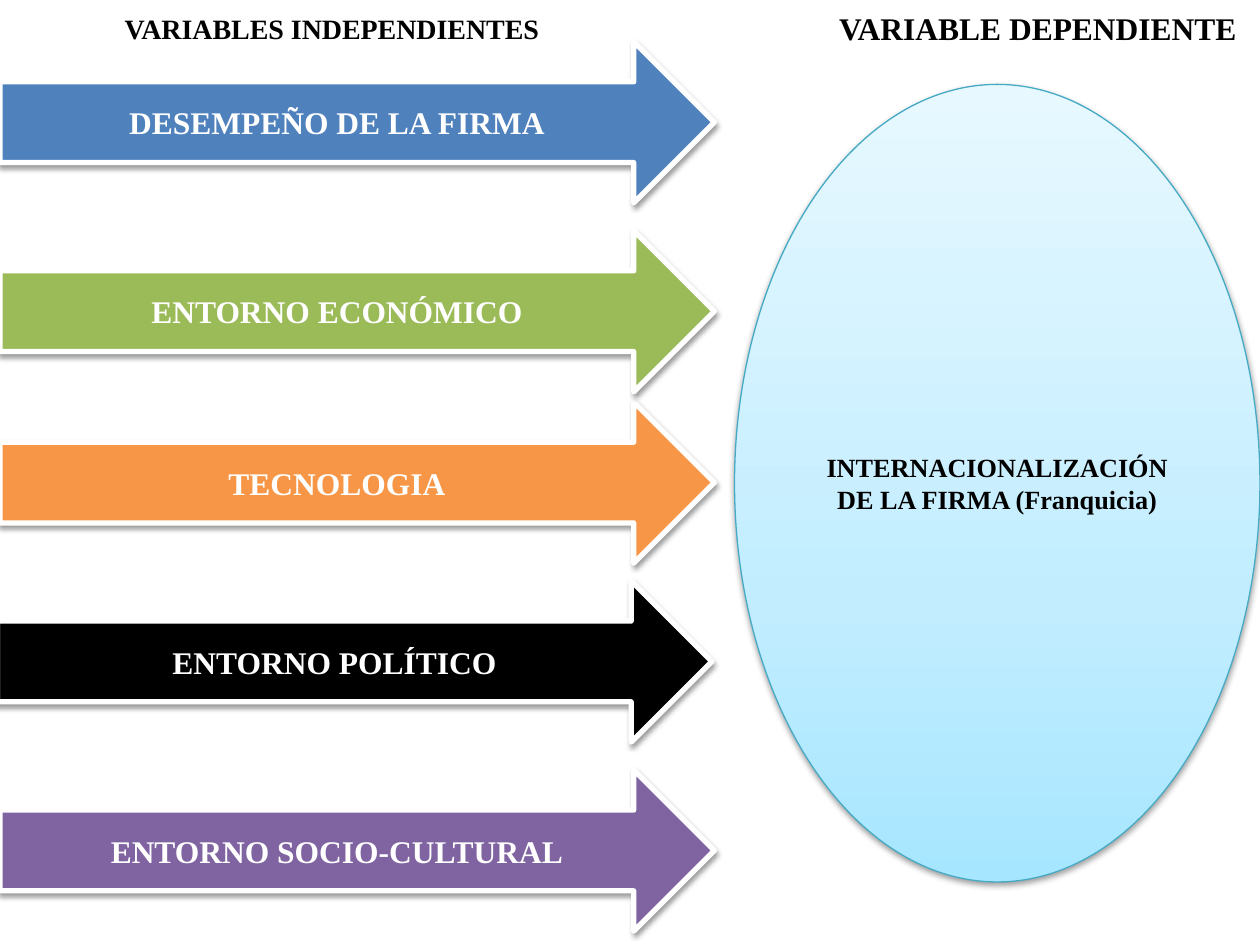
from copy import deepcopy
from dataclasses import dataclass

from lxml import etree
from pptx import Presentation
from pptx.dml.color import RGBColor as RGB
from pptx.enum.shapes import MSO_SHAPE as SHAPE
from pptx.enum.text import MSO_ANCHOR as ANCHOR, MSO_AUTO_SIZE as AUTO, PP_ALIGN as ALIGN
from pptx.oxml.ns import qn
from pptx.util import Inches, Pt


@dataclass(frozen=True)
class Theme:
    font: str = "Times New Roman"
    dark: str = "000000"
    light: str = "FFFFFF"
    blue: str = "4F81BD"
    green: str = "9BBB59"
    orange: str = "F79646"
    purple: str = "8064A2"
    oval_line: str = "46AAC5"
    oval_stops: tuple = ((0, "A7E6FF"), (0.35, "C1EDFF"), (1, "E7F8FF"))
    label: int = 18
    heading: int = 16
    oval_text: int = 15


T = Theme()


def write(tf, text, size, color, align):
    tf.word_wrap = True
    p = tf.paragraphs[0]
    p.alignment = align
    r = p.add_run()
    r.text = text
    r.font.name, r.font.size, r.font.bold = T.font, Pt(size), True
    r.font.color.rgb = RGB.from_string(color)


def finish(s, line_color, line_width):
    """Outline, soft shadow below, and middle anchoring."""
    s.line.color.rgb = RGB.from_string(line_color)
    s.line.width = Pt(line_width)
    s.shadow.inherit = False
    effects = s._element.spPr.find(qn("a:effectLst"))
    shadow = etree.SubElement(effects, qn("a:outerShdw"), blurRad=str(Pt(3.1)),
                              dist=str(Pt(1.6)), dir="5400000", rotWithShape="0")
    color = etree.SubElement(shadow, qn("a:srgbClr"), val=T.dark)
    etree.SubElement(color, qn("a:alpha"), val="38000")
    s.text_frame.vertical_anchor = ANCHOR.MIDDLE


prs = Presentation()
prs.slide_width, prs.slide_height = Inches(10), Inches(7.5)
slide = prs.slides.add_slide(prs.slide_layouts[6])

# Independent variables: left, top, fill and label of each arrow, back to front
arrows = [
    (0, 3.19, T.orange, "TECNOLOGIA"),
    (0, 6.11, T.purple, "ENTORNO SOCIO-CULTURAL"),
    (-0.02, 4.61, T.dark, "ENTORNO POLÍTICO"),
    (0, 1.83, T.green, "ENTORNO ECONÓMICO"),
    (0, 0.33, T.blue, "DESEMPEÑO DE LA FIRMA"),
]
for left, top, fill, label in arrows:
    s = slide.shapes.add_shape(SHAPE.RIGHT_ARROW, Inches(left), Inches(top),
                               Inches(5.67), Inches(1.28))
    s.fill.solid()
    s.fill.fore_color.rgb = RGB.from_string(fill)
    finish(s, T.light, 3)
    write(s.text_frame, label, T.label, T.light, ALIGN.CENTER)

# Dependent variable: oval with a three-stop gradient running upwards
oval = slide.shapes.add_shape(SHAPE.OVAL, Inches(5.83), Inches(0.67),
                              Inches(4.17), Inches(6.33))
oval.fill.gradient()
oval.fill.gradient_angle = 90
stop_list = oval._element.spPr.find(".//" + qn("a:gsLst"))
stop_list.append(deepcopy(stop_list[0]))
for stop, (position, color) in zip(oval.fill.gradient_stops, T.oval_stops):
    stop.position = position
    stop.color.rgb = RGB.from_string(color)
finish(oval, T.oval_line, 0.75)
write(oval.text_frame, "INTERNACIONALIZACIÓN DE LA FIRMA (Franquicia)",
      T.oval_text, T.dark, ALIGN.CENTER)

# Headings: left, width, height, left and top insets, size, text
headings = [
    (0.5, 4, 0.4, 0.49, 0.09, T.heading, "VARIABLES INDEPENDIENTES"),
    (6.33, 3.67, 0.42, 0.33, 0.07, T.label, "VARIABLE DEPENDIENTE"),
]
for left, width, height, inset_left, inset_top, size, text in headings:
    s = slide.shapes.add_textbox(Inches(left), 0, Inches(width), Inches(height))
    tf = s.text_frame
    tf.auto_size = AUTO.SHAPE_TO_FIT_TEXT
    tf.margin_left, tf.margin_top = Inches(inset_left), Inches(inset_top)
    write(tf, text, size, T.dark, ALIGN.LEFT)

prs.save("out.pptx")
